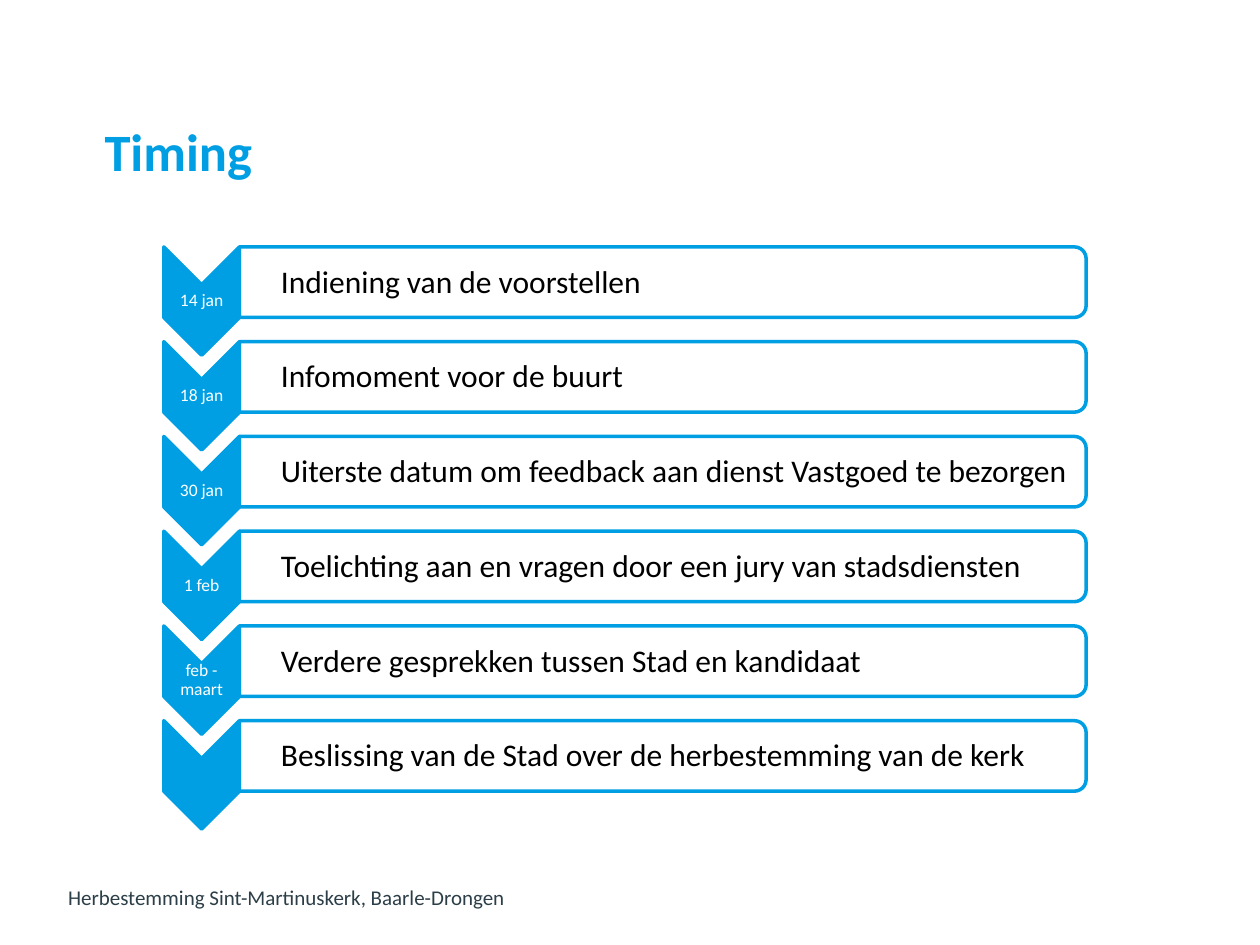
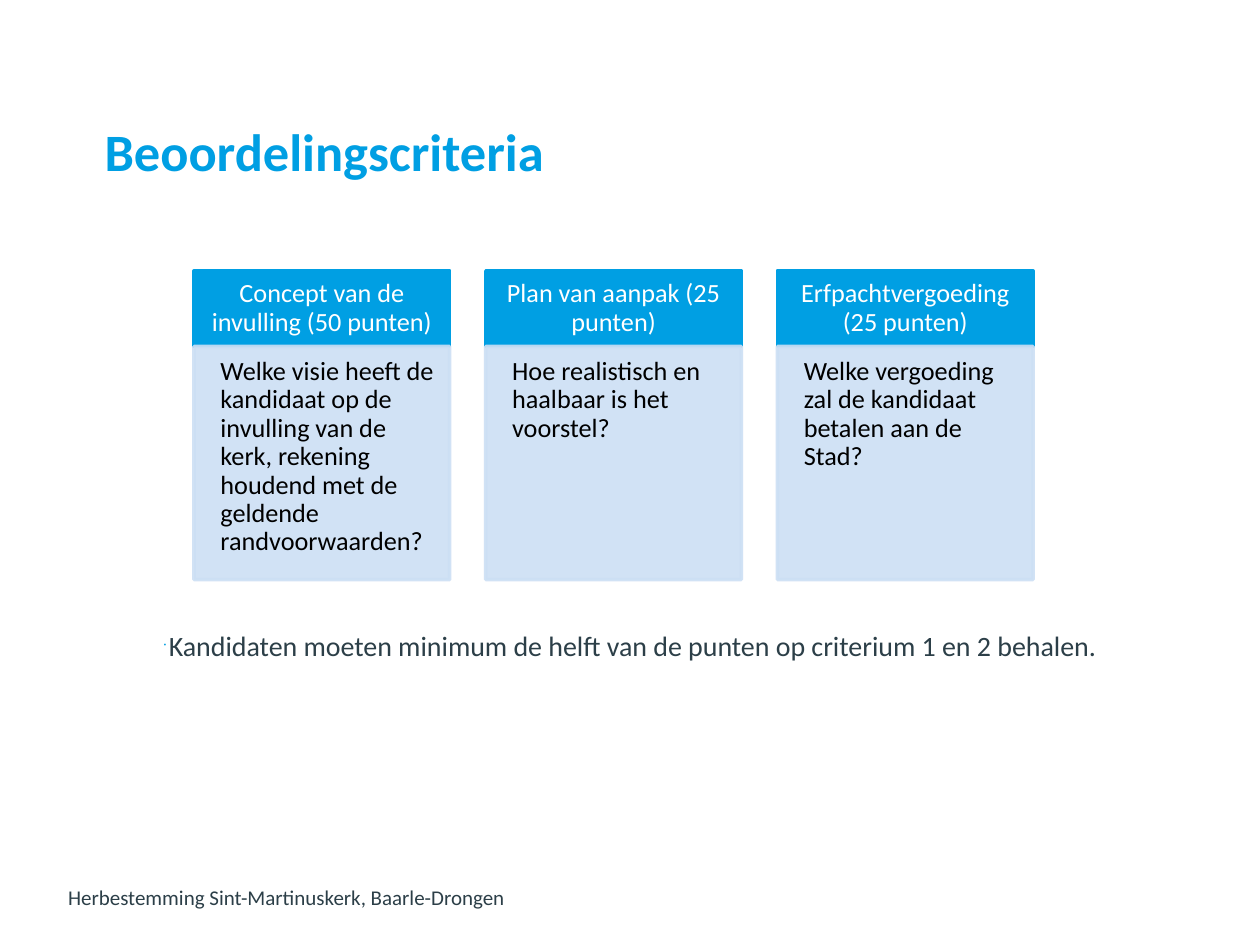
from dataclasses import dataclass

from lxml.etree import SubElement as Sub
from pptx import Presentation
from pptx.dml.color import RGBColor as RGB
from pptx.enum.shapes import MSO_SHAPE as Kind
from pptx.enum.text import MSO_ANCHOR as Anchor, PP_ALIGN as Align
from pptx.oxml.ns import qn
from pptx.shapes.autoshape import Shape
from pptx.slide import Slide
from pptx.util import Inches, Pt

BLUE, PALE, SLATE, WHITE, BLACK = "009FE3", "CCDFF4", "2C3F48", "FFFFFF", "000000"
FONT = "Calibri"
FOOTER = "Herbestemming Sint-Martinuskerk, Baarle-Drongen"


@dataclass(frozen=True)
class Box:
    left: float
    top: float
    width: float
    height: float

    def lengths(self) -> list[Inches]:
        return [Inches(n) for n in (self.left, self.top, self.width, self.height)]


@dataclass(frozen=True)
class Style:
    size: float
    color: str
    bold: bool = False
    align: Align = Align.LEFT
    anchor: Anchor = Anchor.TOP
    space: float = 0.9
    inset: tuple[float, float, float, float] = (0, 0, 0, 0)


@dataclass(frozen=True)
class Step:
    date: str
    task: str


@dataclass(frozen=True)
class Card:
    head: str
    body: str


TITLE = Style(30, BLUE, bold=True, space=0.91)
FOOT = Style(12, SLATE, space=1.0)
DATE = Style(10, WHITE, align=Align.CENTER, anchor=Anchor.MIDDLE, inset=(0.01,) * 4)
TASK = Style(18, BLACK, anchor=Anchor.MIDDLE, inset=(0.33, 0.01, 0.01, 0.01))
HEAD = Style(15, WHITE, align=Align.CENTER, anchor=Anchor.MIDDLE,
             inset=(0.12, 0.07, 0.12, 0.07))
BODY = Style(15, BLACK, inset=(0.21, 0.09, 0.12, 0.13))
NOTE = Style(16, SLATE, space=0.93)

STEPS = [
    Step("14 jan", "Indiening van de voorstellen"),
    Step("18 jan", "Infomoment voor de buurt"),
    Step("30 jan", "Uiterste datum om feedback aan dienst Vastgoed te bezorgen"),
    Step("1 feb", "Toelichting aan en vragen door een jury van stadsdiensten"),
    Step("feb - maart", "Verdere gesprekken tussen Stad en kandidaat"),
    Step("", "Beslissing van de Stad over de herbestemming van de kerk"),
]
CARDS = [
    Card("Concept van de invulling (50 punten)",
         "Welke visie heeft de kandidaat op de invulling van de kerk, "
         "rekening houdend met de geldende randvoorwaarden?"),
    Card("Plan van aanpak (25 punten)", "Hoe realistisch en haalbaar is het voorstel?"),
    Card("Erfpachtvergoeding (25 punten)",
         "Welke vergoeding zal de kandidaat betalen aan de Stad?"),
]


def rgb(color: str) -> RGB:
    return RGB.from_string(color)


def write(shape: Shape, text: str, style: Style) -> None:
    frame = shape.text_frame
    frame.word_wrap = True
    frame.vertical_anchor = style.anchor
    (frame.margin_left, frame.margin_top,
     frame.margin_right, frame.margin_bottom) = [Inches(n) for n in style.inset]
    para = frame.paragraphs[0]
    para.text = text
    para.alignment = style.align
    para.line_spacing = style.space
    font = para.font
    font.name, font.size, font.bold = FONT, Pt(style.size), style.bold
    font.color.rgb = rgb(style.color)


def label(slide: Slide, box: Box, text: str, style: Style) -> Shape:
    shape = slide.shapes.add_textbox(*box.lengths())
    write(shape, text, style)
    return shape


def draw(slide: Slide, kind: Kind, box: Box, fill: str, line: str,
         turn: float = 0, clear: bool = False) -> Shape:
    shape = slide.shapes.add_shape(kind, *box.lengths())
    shape.shadow.inherit = False
    shape.rotation = turn
    shape.fill.solid()
    shape.fill.fore_color.rgb = rgb(fill)
    shape.line.color.rgb = rgb(line)
    shape.line.width = Pt(2)
    if clear:  # 90% opacity wherever the fill colour is used
        for node in shape.element.spPr.iter(qn("a:srgbClr")):
            if node.get("val") == fill:
                Sub(node, qn("a:alpha"), val="90000")
    return shape


def dot(shape: Shape) -> None:
    """Give the paragraph a tiny bullet."""
    props = shape.text_frame.paragraphs[0]._p.get_or_add_pPr()
    indent = Inches(0.04)
    props.set("marL", str(indent))
    props.set("indent", str(-indent))
    tint = Sub(props, qn("a:buClr"))
    Sub(tint, qn("a:srgbClr"), val=BLUE)
    Sub(props, qn("a:buSzPct"), val="25000")
    Sub(props, qn("a:buChar"), char="•")
    # The schema wants the font defaults after the bullet
    props.append(props.find(qn("a:defRPr")))


def start(deck: Presentation, title: str) -> Slide:
    slide = deck.slides.add_slide(deck.slide_layouts[6])
    label(slide, Box(0.54, 7.02, 7.85, 0.25), FOOTER, FOOT)
    label(slide, Box(0.83, 1, 7.85, 1.25), title, TITLE)
    return slide


def timing(deck: Presentation) -> None:
    slide = start(deck, "Timing")
    for row, step in enumerate(STEPS):
        top = 1.96 + row * 0.752
        # Chevron and bar are turned a quarter about their centres
        draw(slide, Kind.CHEVRON, Box(1.17, top + 0.13, 0.86, 0.6), BLUE, BLUE, 90)
        if step.date:
            label(slide, Box(1.3, top + 0.3, 0.6, 0.26), step.date, DATE)
        draw(slide, Kind.ROUND_2_SAME_RECTANGLE, Box(4.98, top - 3.08, 0.56, 6.72),
             WHITE, BLUE, 90, clear=True)
        label(slide, Box(1.9, top + 0.03, 6.69, 0.51), step.task, TASK)


def criteria(deck: Presentation) -> None:
    slide = start(deck, "Beoordelingscriteria")
    for col, card in enumerate(CARDS):
        left = 1.54 + col * 2.315
        head = draw(slide, Kind.RECTANGLE, Box(left, 2.15, 2.03, 0.6), BLUE, BLUE)
        write(head, card.head, HEAD)
        body = draw(slide, Kind.RECTANGLE, Box(left, 2.75, 2.03, 1.85),
                    PALE, PALE, clear=True)
        write(body, card.body, BODY)
    # Closing remark
    note = label(slide, Box(1.3, 5.01, 7.72, 0.3),
                 "Kandidaten moeten minimum de helft van de punten "
                 "op criterium 1 en 2 behalen.", NOTE)
    dot(note)


def main() -> None:
    deck = Presentation()
    deck.slide_width, deck.slide_height = Inches(10), Inches(7.5)
    timing(deck)
    criteria(deck)
    deck.save("out.pptx")


if __name__ == "__main__":
    main()
